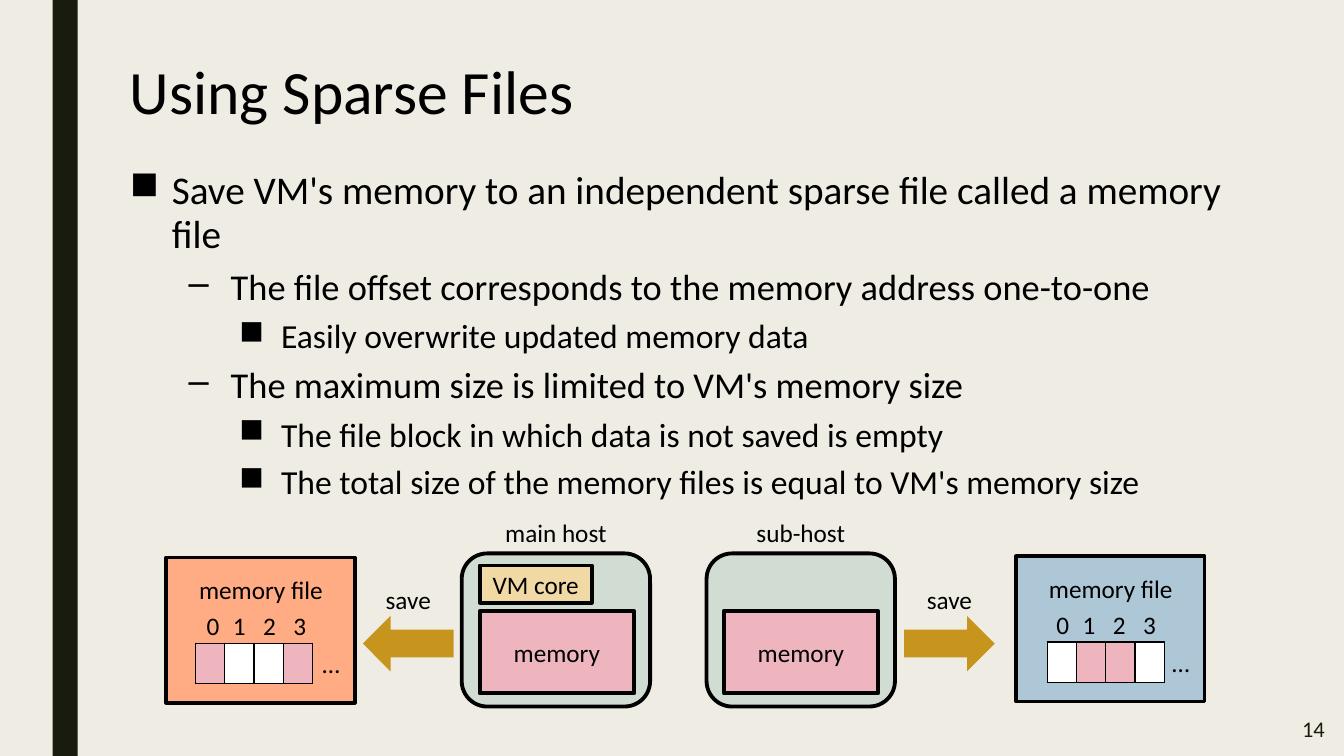
from dataclasses import dataclass

from lxml import etree
from pptx import Presentation
from pptx.dml.color import RGBColor
from pptx.enum.shapes import MSO_SHAPE
from pptx.enum.text import MSO_ANCHOR, PP_ALIGN
from pptx.oxml.ns import qn
from pptx.util import Pt

RECTANGLE, ROUNDED = MSO_SHAPE.RECTANGLE, MSO_SHAPE.ROUNDED_RECTANGLE
LEFT_ARROW, RIGHT_ARROW = MSO_SHAPE.LEFT_ARROW, MSO_SHAPE.RIGHT_ARROW
LEFT, CENTER, RIGHT = PP_ALIGN.LEFT, PP_ALIGN.CENTER, PP_ALIGN.RIGHT
TOP, MIDDLE = MSO_ANCHOR.TOP, MSO_ANCHOR.MIDDLE


@dataclass(frozen=True)
class Theme:
    font: str = "Calibri"
    background: str = "EFEDE3"
    bar: str = "191B0E"
    ink: str = "000000"
    main_file: str = "FFAB83"
    sub_file: str = "ADC7D6"
    host: str = "D1DDD2"
    memory: str = "EEB5BF"
    core: str = "F0D9A5"
    arrow: str = "C7941E"
    empty: str = "FFFFFF"
    title_size: int = 44
    body_sizes: tuple = (28, 26, 24)
    label_size: int = 18
    number_size: int = 16
    outline: float = 2.75
    cell_line: float = 1


theme = Theme()
presentation = Presentation()
presentation.slide_width, presentation.slide_height = Pt(960), Pt(540)
slide = presentation.slides.add_slide(presentation.slide_layouts[6])
slide.background.fill.solid()
slide.background.fill.fore_color.rgb = RGBColor.from_string(theme.background)


def write(shape, text, size=theme.label_size, align=CENTER, anchor=TOP, color=theme.ink):
    frame = shape.text_frame
    frame.word_wrap = True
    frame.vertical_anchor = anchor
    frame.text = text
    for paragraph in frame.paragraphs:
        paragraph.alignment = align
        paragraph.font.name = theme.font
        paragraph.font.size = Pt(size)
        paragraph.font.color.rgb = RGBColor.from_string(color)
    return frame.paragraphs


def add_box(kind, left, top, width, height, fill, outlined=True):
    shape = slide.shapes.add_shape(kind, Pt(left), Pt(top), Pt(width), Pt(height))
    shape.shadow.inherit = False
    shape.fill.solid()
    shape.fill.fore_color.rgb = RGBColor.from_string(fill)
    if outlined:
        shape.line.color.rgb = RGBColor.from_string(theme.ink)
        shape.line.width = Pt(theme.outline)
    else:
        shape.line.fill.background()
    return shape


# Side bar, title and page number
add_box(RECTANGLE, 37.5, 0, 18, 540, theme.bar, outlined=False)
title_box = slide.shapes.add_textbox(Pt(85.7), Pt(27.4), Pt(821.5), Pt(80.6))
title = write(title_box, "Using Sparse Files", theme.title_size, LEFT, MIDDLE)[0]
title.line_spacing = 0.89
number_box = slide.shapes.add_textbox(Pt(827.3), Pt(504.7), Pt(126), Pt(31.7))
write(number_box, "14", theme.number_size, RIGHT, MIDDLE, theme.bar)

# Bulleted text: level and wording
points = [
    (0, "Save VM's memory to an independent sparse file called a memory file"),
    (1, "The file offset corresponds to the memory address one-to-one"),
    (2, "Easily overwrite updated memory data"),
    (1, "The maximum size is limited to VM's memory size"),
    (2, "The file block in which data is not saved is empty"),
    (2, "The total size of the memory files is equal to VM's memory size"),
]
indents = (30, 72, 108)
body_box = slide.shapes.add_textbox(Pt(85.7), Pt(117.4), Pt(821.5), Pt(383.8))
paragraphs = write(body_box, "\n".join(text for _, text in points), align=LEFT)
for paragraph, (level, _) in zip(paragraphs, points):
    paragraph.level = level
    paragraph.font.size = Pt(theme.body_sizes[level])
    paragraph.line_spacing = 0.94
    paragraph.space_before = Pt(5 if level else 10)
    paragraph.space_after = Pt(2)
    properties = paragraph._p.get_or_add_pPr()
    properties.set("marL", str(Pt(indents[level])))
    properties.set("indent", str(-Pt(30)))
    bullet = etree.SubElement(properties, qn("a:buChar"))
    bullet.set("char", "–" if level == 1 else "■")
    properties.insert_element_before(bullet, "a:tabLst", "a:defRPr", "a:extLst")

# Hosts with their memory
for left, name, memory_left in ((329.8, "main host", 342.7), (504.7, "sub-host", 517)):
    add_box(ROUNDED, left, 395.3, 134.6, 109.4, theme.host)
    label = slide.shapes.add_textbox(Pt(left), Pt(365.8), Pt(134.6), Pt(29))
    write(label, name)
    memory = add_box(RECTANGLE, memory_left, 436.3, 110.2, 59, theme.memory)
    write(memory, "memory", anchor=MIDDLE)
core = add_box(RECTANGLE, 342.7, 403.9, 79.9, 26.6, theme.core)
write(core, "VM core", anchor=MIDDLE)

# Save arrows
for kind, left in ((LEFT_ARROW, 259.2), (RIGHT_ARROW, 645.8)):
    add_box(kind, left, 439.9, 64.8, 39.6, theme.arrow, outlined=False)
    label = slide.shapes.add_textbox(Pt(left), Pt(413.5), Pt(64.8), Pt(29))
    write(label, "save")

# Memory files: block numbers above, saved blocks below
memory_files = [
    (118.8, 398.2, theme.main_file, 139.7, (0, 3)),
    (725.8, 397.4, theme.sub_file, 748.1, (1, 2)),
]
for left, top, color, blocks_left, saved in memory_files:
    add_box(RECTANGLE, left, top, 134.6, 103.7, color)
    label = slide.shapes.add_textbox(Pt(left + 15.8), Pt(top + 8.6), Pt(103.7), Pt(29))
    write(label, "memory file")
    ellipsis = slide.shapes.add_textbox(Pt(left + 104.4), Pt(top + 61.2), Pt(30), Pt(29))
    write(ellipsis, "…", align=LEFT)

    rows = [
        (left + 21.6, top + 34.7, (18.7, 21.6, 21.6, 21.6), True),
        (blocks_left, top + 61.2, (20.9,) * 4, False),
    ]
    for row_left, row_top, widths, numbered in rows:
        table = slide.shapes.add_table(
            1, 4, Pt(row_left), Pt(row_top), Pt(sum(widths)), Pt(28.8)).table
        table.first_row = table.horz_banding = False
        for index, width in enumerate(widths):
            table.columns[index].width = Pt(width)
            cell = table.cell(0, index)
            cell.margin_right = 0
            if numbered:
                cell.fill.background()
                write(cell, str(index), align=LEFT)
            else:
                cell.fill.solid()
                block = theme.memory if index in saved else theme.empty
                cell.fill.fore_color.rgb = RGBColor.from_string(block)
            cell_properties = cell._tc.get_or_add_tcPr()
            for order, side in enumerate(("a:lnL", "a:lnR", "a:lnT", "a:lnB")):
                border = etree.Element(qn(side), w=str(Pt(theme.cell_line)))
                if numbered:
                    etree.SubElement(border, qn("a:noFill"))
                else:
                    solid = etree.SubElement(border, qn("a:solidFill"))
                    etree.SubElement(solid, qn("a:srgbClr"), val=theme.ink)
                cell_properties.insert(order, border)

presentation.save("out.pptx")
